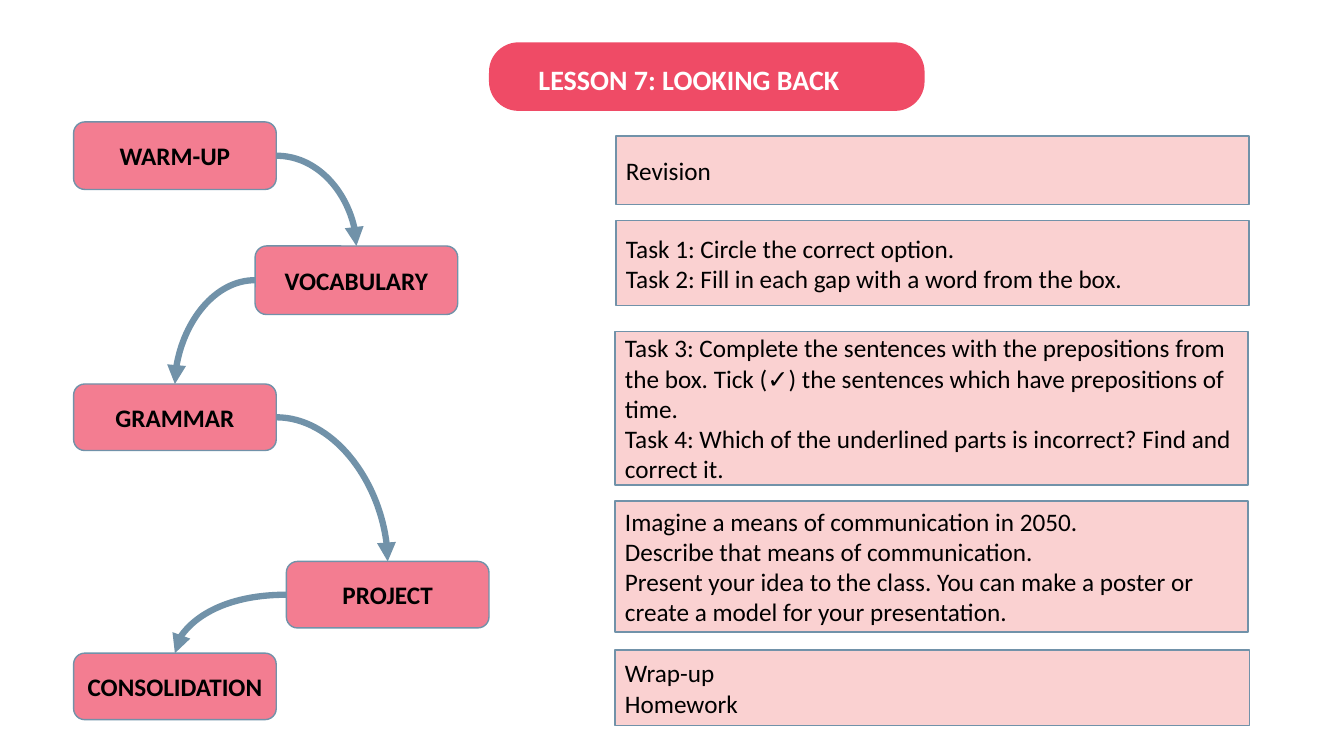
from dataclasses import dataclass

import pptx
import pptx.dml.color
import pptx.enum.shapes
import pptx.enum.text
import pptx.oxml.ns
import pptx.oxml.xmlchemy
import pptx.util
from lxml import etree
from pptx.oxml.ns import qn
from pptx.shapes.autoshape import Shape
from pptx.shapes.shapetree import SlideShapes

EMU_PER_PX = 9144
COLORS = {
    "banner": "EF4B66",
    "stage": "F37D91",
    "task": "F7A5A5",
    "line": "7192A9",
    "text": "000000",
    "title": "FFFFFF",
}
FONT = "Calibri"
TICK = "✓"
TICK_FONT = "Arial"
STAGE_LEFT, STAGE_WIDTH = 73, 201
SITE_TOP, SITE_LEFT, SITE_RIGHT = 0, 1, 3
ALIGN = pptx.enum.text.PP_ALIGN
ANCHOR = pptx.enum.text.MSO_ANCHOR
SHAPE = pptx.enum.shapes.MSO_SHAPE


@dataclass(frozen=True)
class Stage:
    name: str
    left: int
    top: int
    height: int


@dataclass(frozen=True)
class TaskBox:
    left: int
    top: int
    width: int
    height: int
    lines: tuple[str, ...]


STAGES = [
    Stage("WARM-UP", STAGE_LEFT, 121, 67),
    Stage("VOCABULARY", 253, 244, 68),
    Stage("GRAMMAR", STAGE_LEFT, 381, 66),
    Stage("PROJECT", 284, 557, 66),
    Stage("CONSOLIDATION", STAGE_LEFT, 648, 66),
]
TASK_BOXES = [
    TaskBox(611, 135, 628, 68, ("Revision",)),
    TaskBox(611, 219, 628, 84, (
        "Task 1: Circle the correct option.",
        "Task 2: Fill in each gap with a word from the box.",
    )),
    TaskBox(610, 329, 628, 152, (
        "Task 3: Complete the sentences with the prepositions from the box. "
        "Tick (✓) the sentences which have prepositions of time.",
        "Task 4: Which of the underlined parts is incorrect? Find and correct it.",
    )),
    TaskBox(610, 497, 628, 130, (
        "Imagine a means of communication in 2050.",
        "Describe that means of communication.",
        "Present your idea to the class. You can make a poster or "
        "create a model for your presentation.",
    )),
    TaskBox(610, 645, 629, 75, ("Wrap-up", "Homework")),
]


def px(value: int) -> pptx.util.Emu:
    return pptx.util.Emu(value * EMU_PER_PX)


def rgb(name: str) -> pptx.dml.color.RGBColor:
    return pptx.dml.color.RGBColor.from_string(COLORS[name])


def add_box(shapes: SlideShapes, kind: SHAPE, left: int, top: int,
            width: int, height: int, fill: str, outlined: bool = True) -> Shape:
    sp = shapes.add_shape(kind, px(left), px(top), px(width), px(height))
    sp.shadow.inherit = False
    sp.fill.solid()
    sp.fill.fore_color.rgb = rgb(fill)
    if outlined:
        sp.line.color.rgb = rgb("line")
        sp.line.width = pptx.util.Pt(1)
    else:
        sp.line.fill.background()
    return sp


def format_text(sp: Shape, size: int, color: str, align: ALIGN,
                anchor: ANCHOR, bold: bool = False) -> None:
    tf = sp.text_frame
    tf.word_wrap = True
    tf.vertical_anchor = anchor
    for p in tf.paragraphs:
        p.alignment = align
        for r in p.runs:
            r.font.name = TICK_FONT if r.text == TICK else FONT
            r.font.size = pptx.util.Pt(size)
            r.font.bold = bold
            r.font.color.rgb = rgb(color)


def add_title(shapes: SlideShapes) -> None:
    banner = add_box(shapes, SHAPE.ROUNDED_RECTANGLE, 485, 42, 432, 68, "banner", False)
    banner.adjustments[0] = 0.43
    title = shapes.title
    title.left, title.top, title.width, title.height = px(524), px(57), px(393), px(44)
    title.text_frame.text = "LESSON 7: LOOKING BACK"
    title.text_frame.auto_size = pptx.enum.text.MSO_AUTO_SIZE.NONE
    format_text(title, 20, "title", ALIGN.LEFT, ANCHOR.TOP, bold=True)
    banner.element.addnext(title.element)


def add_stage(shapes: SlideShapes, stage: Stage) -> Shape:
    sp = add_box(shapes, SHAPE.ROUNDED_RECTANGLE, stage.left, stage.top,
                 STAGE_WIDTH, stage.height, "stage")
    sp.text_frame.text = stage.name
    format_text(sp, 18, "text", ALIGN.CENTER, ANCHOR.MIDDLE, bold=True)
    return sp


def add_task_box(shapes: SlideShapes, box: TaskBox) -> None:
    sp = add_box(shapes, SHAPE.RECTANGLE, box.left, box.top, box.width, box.height, "task")
    fill_color = sp.element.spPr.find(f"{qn('a:solidFill')}/{qn('a:srgbClr')}")
    etree.SubElement(fill_color, qn("a:alpha"), val="50000")
    tf = sp.text_frame
    tf.text = "\n".join(box.lines)
    for p in tf.paragraphs:
        before, *rest = p.text.partition(TICK)
        p.text = before
        for piece in filter(None, rest):
            p.add_run().text = piece
    format_text(sp, 18, "text", ALIGN.LEFT, ANCHOR.MIDDLE)


def add_arrow(shapes: SlideShapes, start: Shape, end: Shape) -> None:
    rightward = end.left > start.left
    begin_x = start.left + start.width if rightward else start.left
    cxn = shapes.add_connector(
        pptx.enum.shapes.MSO_CONNECTOR.CURVE,
        begin_x, start.top + start.height // 2,
        end.left + end.width // 2, end.top)
    cxn.begin_connect(start, SITE_RIGHT if rightward else SITE_LEFT)
    cxn.end_connect(end, SITE_TOP)
    cxn.line.color.rgb = rgb("line")
    cxn.line.width = pptx.util.Pt(4.5)
    spPr = cxn.element.spPr
    spPr.find(qn("a:prstGeom")).set("prst", "curvedConnector2")
    etree.SubElement(spPr.find(qn("a:ln")), qn("a:tailEnd"), type="triangle")
    etree.SubElement(spPr, qn("a:effectLst"))


def main() -> None:
    prs = pptx.Presentation()
    prs.slide_width, prs.slide_height = px(1333), px(750)
    shapes = prs.slides.add_slide(prs.slide_layouts.get_by_name("Title Only")).shapes
    add_title(shapes)
    stages = [add_stage(shapes, stage) for stage in STAGES]
    for box in TASK_BOXES:
        add_task_box(shapes, box)
    for start, end in zip(stages, stages[1:]):
        add_arrow(shapes, start, end)
    prs.save("out.pptx")


if __name__ == "__main__":
    main()
